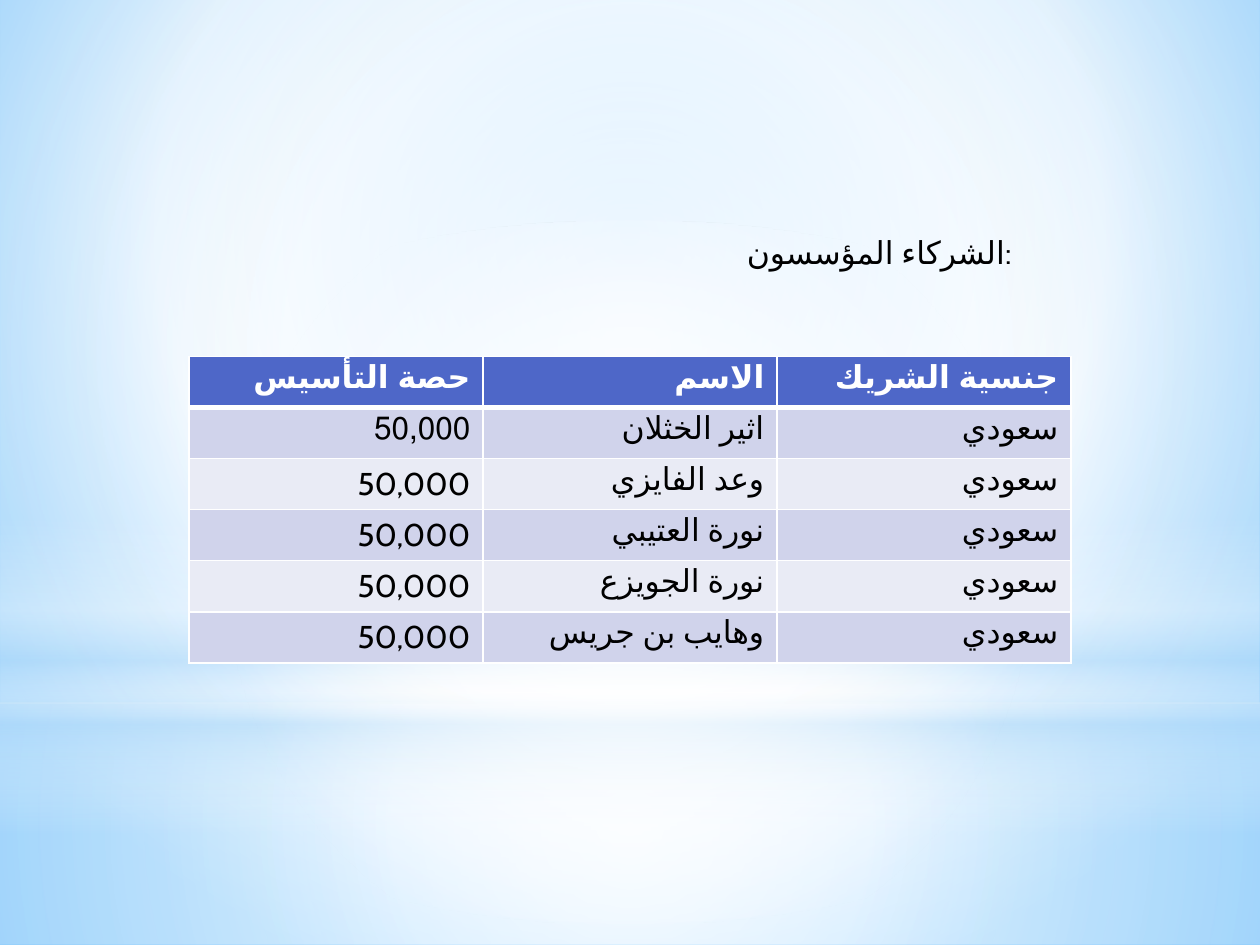
from lxml.etree import SubElement
from pptx import Presentation
from pptx.dml.color import RGBColor
from pptx.enum.lang import MSO_LANGUAGE_ID
from pptx.enum.shapes import MSO_SHAPE
from pptx.enum.text import MSO_AUTO_SIZE, PP_ALIGN
from pptx.oxml.ns import qn
from pptx.util import Inches, Pt


def set_text(tf, text, color="000000", bold=False, align=None, rtl=False):
    p = tf.paragraphs[0]
    p.alignment = align
    if rtl:
        p._p.get_or_add_pPr().set("rtl", "1")
    r = p.add_run()
    r.text = text
    r.font.language_id = MSO_LANGUAGE_ID.ARABIC
    r.font.name = "Cabin"
    r.font.size = Pt(18)
    r.font.bold = bold
    r.font.color.rgb = RGBColor.from_string(color)


def set_gradient(fill, element, stops, focus=None):
    """Stops are (position %, colour, opacity %); focus is the circle's inner rectangle."""
    fill.gradient()
    grad = element.find(".//" + qn("a:gradFill"))
    for child in list(grad):
        grad.remove(child)
    gs_list = SubElement(grad, qn("a:gsLst"))
    for pos, color, opacity in stops:
        gs = SubElement(gs_list, qn("a:gs"), pos=str(pos * 1000))
        clr = SubElement(gs, qn("a:srgbClr"), val=color)
        if opacity < 100:
            SubElement(clr, qn("a:alpha"), val=str(opacity * 1000))
    if focus:
        circle = SubElement(grad, qn("a:path"), path="circle")
        sides = {side: str(v * 1000) for side, v in zip("ltrb", focus)}
        SubElement(circle, qn("a:fillToRect"), **sides)
    else:
        SubElement(grad, qn("a:lin"), ang="5400000", scaled="0")


prs = Presentation()
prs.slide_width, prs.slide_height = Inches(10), Inches(7.5)
s = prs.slides.add_slide(prs.slide_layouts[6])

# Background
set_gradient(s.background.fill, s._element,
             [(0, "9ED5FF", 100), (60, "FFFFFF", 100), (100, "5BB9FF", 100)],
             (20, 10, 20, 60))

# Glow layers: shape, top, height, stops, focus
CENTER = (50, 50, 50, 50)
layers = [
    (MSO_SHAPE.RECTANGLE, 5.58, 1.92,
     [(0, "FFFFFF", 91), (37, "FFFFFF", 76), (100, "B4DCFA", 79)], CENTER),
    (MSO_SHAPE.RECTANGLE, 0, 5.58,
     [(0, "FFFFFF", 89), (48, "FFFFFF", 62), (100, "B4DCFA", 79)], CENTER),
    (MSO_SHAPE.RECTANGLE, 4.12, 2.5,
     [(0, "FFFFFF", 0), (29, "FFFFFF", 30), (45, "B4DCFA", 40),
      (55, "FFFFFF", 26), (65, "B4DCFA", 60), (100, "FFFFFF", 0)], None),
    (MSO_SHAPE.OVAL, 1.75, 5.58,
     [(0, "FFFFFF", 100), (56, "FFFFFF", 0)], CENTER),
]
for shape, top, height, stops, focus in layers:
    sp = s.shapes.add_shape(shape, 0, Inches(top), prs.slide_width, Inches(height))
    sp.shadow.inherit = False
    sp.line.fill.background()
    set_gradient(sp.fill, sp._element, stops, focus)

# Founders table
founders = ["اثير الخثلان", "وعد الفايزي", "نورة العتيبي", "نورة الجويزع", "وهايب بن جريس"]
rows = [("حصة التأسيس", "الاسم", "جنسية الشريك")]
rows += [("50,000", name, "سعودي") for name in founders]
table = s.shapes.add_table(len(rows), 3, Inches(1.5), Inches(2.83),
                           Inches(7), Inches(2.43)).table
for i, row in enumerate(rows):
    header = i == 0
    for j, text in enumerate(row):
        cell = table.cell(i, j)
        tc_pr = cell._tc.get_or_add_tcPr()
        for side in "LRTB":
            thick = (i, side) in [(0, "B"), (1, "T")]
            ln = SubElement(tc_pr, qn("a:ln" + side), w=str(Pt(3 if thick else 1)))
            SubElement(SubElement(ln, qn("a:solidFill")), qn("a:srgbClr"), val="FFFFFF")
        cell.fill.solid()
        band = "4E67C8" if header else ("E9EBF5", "D0D3EB")[i % 2]
        cell.fill.fore_color.rgb = RGBColor.from_string(band)
        # Names and the first share run right to left
        rtl = not header and (j == 1 or (i, j) == (1, 0))
        set_text(cell.text_frame, text, color="FFFFFF" if header else "000000",
                 bold=header, align=PP_ALIGN.RIGHT, rtl=rtl)

# Heading
tf = s.shapes.add_textbox(Inches(5.83), Inches(1.8), Inches(2.58), Inches(0.4)).text_frame
tf.word_wrap = True
tf.auto_size = MSO_AUTO_SIZE.SHAPE_TO_FIT_TEXT
set_text(tf, "الشركاء المؤسسون:")

prs.save("out.pptx")
